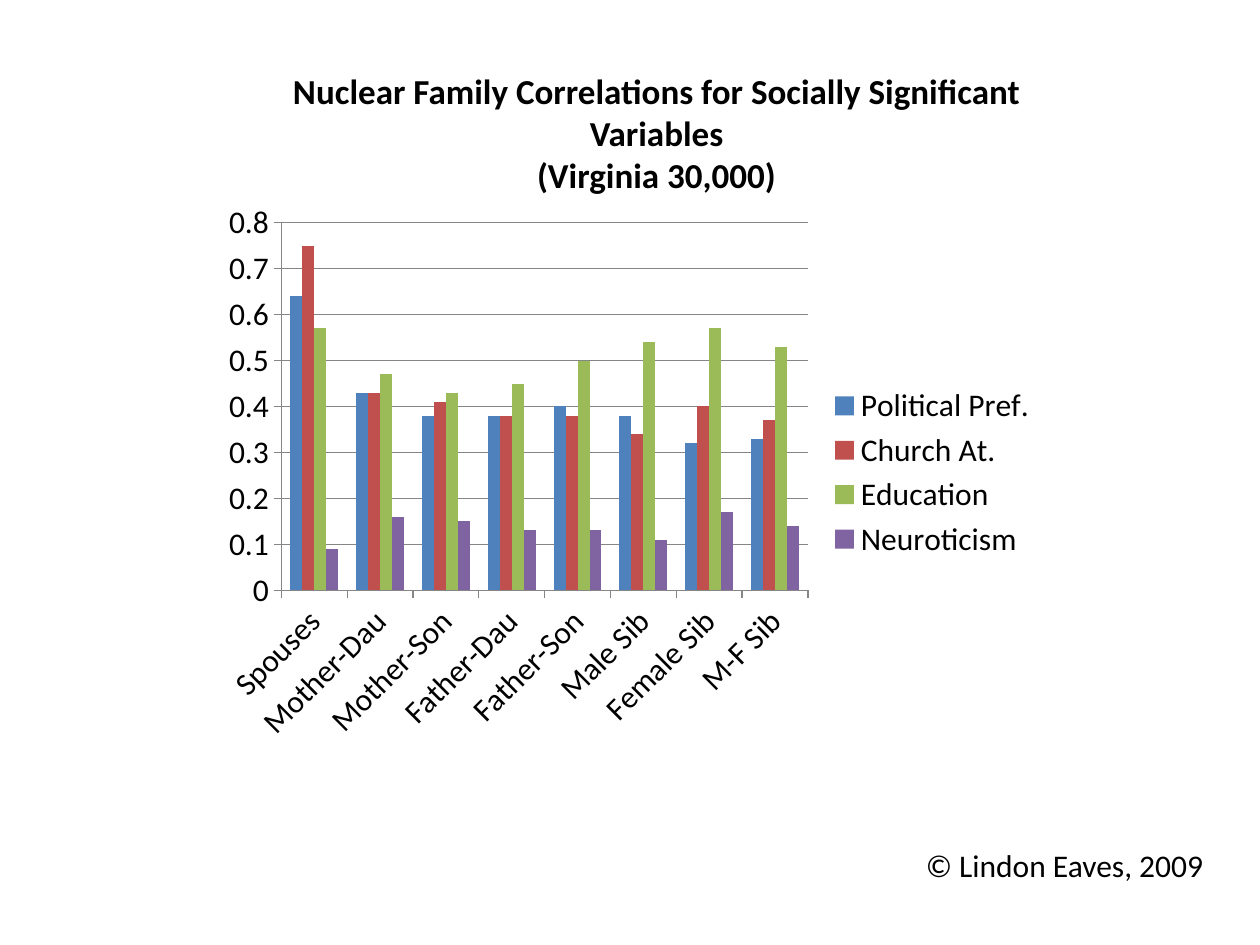
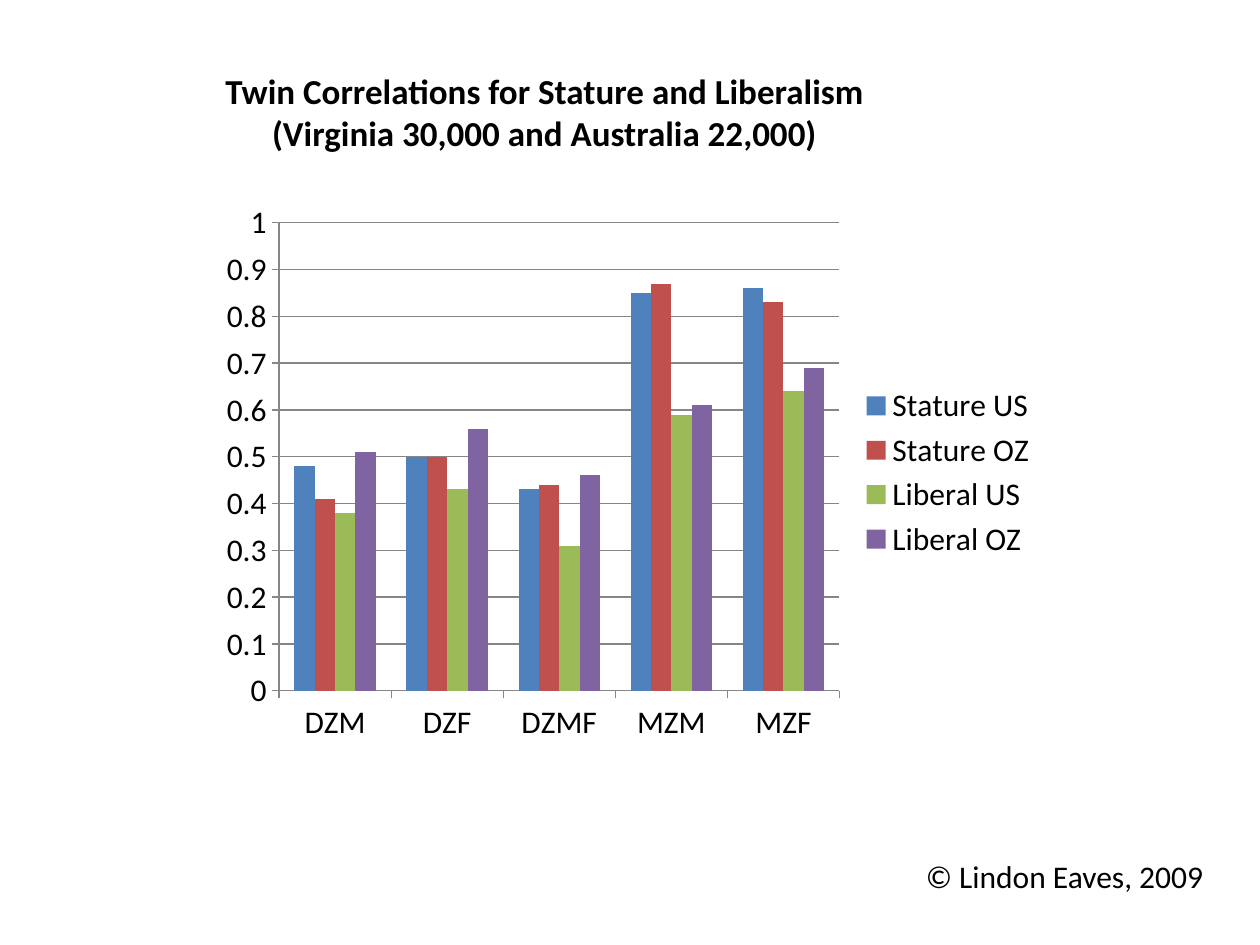
from dataclasses import dataclass

from pptx import Presentation
from pptx.chart.data import CategoryChartData
from pptx.dml.color import RGBColor
from pptx.enum.chart import XL_CHART_TYPE, XL_LEGEND_POSITION, XL_TICK_MARK
from pptx.enum.text import MSO_ANCHOR, MSO_AUTO_SIZE, PP_ALIGN
from pptx.util import Pt

CLUSTERED = XL_CHART_TYPE.COLUMN_CLUSTERED
LEGEND_RIGHT = XL_LEGEND_POSITION.RIGHT
TICK_OUT, TICK_NONE = XL_TICK_MARK.OUTSIDE, XL_TICK_MARK.NONE
TOP = MSO_ANCHOR.TOP
FIXED_SIZE = MSO_AUTO_SIZE.NONE
LEFT, CENTER = PP_ALIGN.LEFT, PP_ALIGN.CENTER

# Shared look
FONT = "Calibri"
COLORS = {
    "text": "000000",
    "background": "FFFFFF",
    "axis": "868686",
    "first": "4F81BD",
    "second": "C0504D",
    "third": "9BBB59",
    "fourth": "8064A2",
}
SERIES_COLORS = ("first", "second", "third", "fourth")
CHART_BOX = (Pt(120), Pt(110), Pt(480), Pt(320))
TITLE_LEFT, TITLE_TOP, TITLE_HEIGHT = Pt(120), Pt(36), Pt(55.7)
CREDIT = "© Lindon Eaves, 2009"
CREDIT_LEFT, CREDIT_WIDTH, CREDIT_HEIGHT = Pt(522), Pt(175), Pt(29)


@dataclass(frozen=True)
class CorrelationSlide:
    title: tuple[str, ...]
    title_width: float
    credit_top: float
    scale_max: float
    groups: tuple[str, ...]
    correlations: dict[str, tuple[float, ...]]


SLIDES = (
    CorrelationSlide(
        title=("Nuclear Family Correlations for Socially Significant Variables",
               "(Virginia 30,000)"),
        title_width=510.5,
        credit_top=480,
        scale_max=0.8,
        groups=("Spouses", "Mother-Dau", "Mother-Son", "Father-Dau",
                "Father-Son", "Male Sib", "Female Sib", "M-F Sib"),
        correlations={
            "Political Pref.": (0.64, 0.43, 0.38, 0.38, 0.4, 0.38, 0.32, 0.33),
            "Church At.": (0.75, 0.43, 0.41, 0.38, 0.38, 0.34, 0.4, 0.37),
            "Education": (0.57, 0.47, 0.43, 0.45, 0.5, 0.54, 0.57, 0.53),
            "Neuroticism": (0.09, 0.16, 0.15, 0.13, 0.13, 0.11, 0.17, 0.14),
        },
    ),
    CorrelationSlide(
        title=("Twin Correlations for Stature and Liberalism",
               "(Virginia 30,000 and Australia 22,000)"),
        title_width=382.5,
        credit_top=486,
        scale_max=1,
        groups=("DZM", "DZF", "DZMF", "MZM", "MZF"),
        correlations={
            "Stature US": (0.48, 0.5, 0.43, 0.85, 0.86),
            "Stature OZ": (0.41, 0.5, 0.44, 0.87, 0.83),
            "Liberal US": (0.38, 0.43, 0.31, 0.59, 0.64),
            "Liberal OZ": (0.51, 0.56, 0.46, 0.61, 0.69),
        },
    ),
)


def rgb(name: str) -> RGBColor:
    return RGBColor.from_string(COLORS[name])


def style_font(font, size: float, bold: bool = False) -> None:
    font.name, font.size, font.bold = FONT, Pt(size), bold
    font.color.rgb = rgb("text")


def write_text(shape, *lines: str, size: float = 18, bold: bool = False,
               align=LEFT, wrap: bool = True) -> None:
    frame = shape.text_frame
    frame.text = "\n".join(lines)
    frame.auto_size = FIXED_SIZE
    frame.word_wrap = wrap
    frame.vertical_anchor = TOP
    for paragraph in frame.paragraphs:
        paragraph.alignment = align
        style_font(paragraph.runs[0].font, size, bold)


def style_line(line) -> None:
    line.color.rgb = rgb("axis")
    line.width = Pt(0.75)


def add_correlation_chart(slide, content: CorrelationSlide) -> None:
    data = CategoryChartData(number_format="General")
    data.categories = content.groups
    for variable, values in content.correlations.items():
        data.add_series(variable, values)
    chart = slide.shapes.add_chart(CLUSTERED, *CHART_BOX, data).chart
    chart.has_title = False
    style_font(chart.font, 18)

    # Bars
    bars = chart.plots[0]
    bars.gap_width, bars.overlap = 150, 0
    bars.vary_by_categories = False
    for series, color in zip(bars.series, SERIES_COLORS):
        series.format.fill.solid()
        series.format.fill.fore_color.rgb = rgb(color)
        series.invert_if_negative = False

    # Axes and gridlines
    for axis in (chart.category_axis, chart.value_axis):
        axis.major_tick_mark, axis.minor_tick_mark = TICK_OUT, TICK_NONE
        style_line(axis.format.line)
    scale = chart.value_axis
    scale.minimum_scale, scale.maximum_scale = 0, content.scale_max
    scale.major_unit = 0.1
    scale.has_major_gridlines = True
    style_line(scale.major_gridlines.format.line)

    # Legend
    chart.has_legend = True
    chart.legend.position = LEGEND_RIGHT
    chart.legend.include_in_layout = False


def add_correlation_slide(deck, content: CorrelationSlide) -> None:
    slide = deck.slides.add_slide(deck.slide_layouts.get_by_name("Title Only"))
    slide.background.fill.solid()
    slide.background.fill.fore_color.rgb = rgb("background")
    add_correlation_chart(slide, content)

    title = slide.shapes.title
    title.left, title.top = TITLE_LEFT, TITLE_TOP
    title.width, title.height = Pt(content.title_width), TITLE_HEIGHT
    write_text(title, *content.title, size=20, bold=True, align=CENTER)

    credit = slide.shapes.add_textbox(
        CREDIT_LEFT, Pt(content.credit_top), CREDIT_WIDTH, CREDIT_HEIGHT)
    write_text(credit, CREDIT, wrap=False)


def main() -> None:
    deck = Presentation()
    deck.slide_width, deck.slide_height = Pt(720), Pt(540)
    for content in SLIDES:
        add_correlation_slide(deck, content)
    deck.save("out.pptx")


if __name__ == "__main__":
    main()
